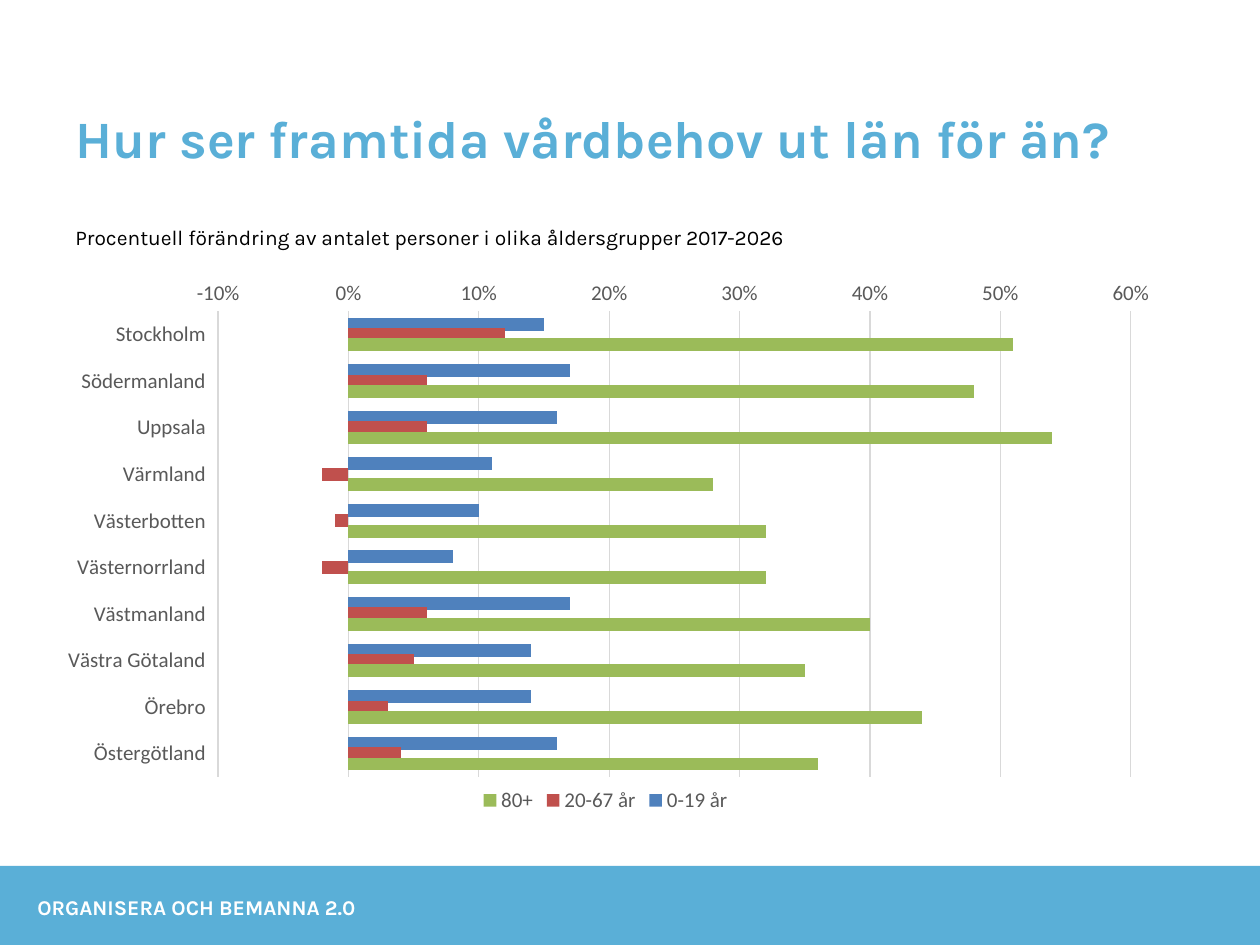
from lxml.etree import SubElement
from pptx import Presentation
from pptx.chart.data import CategoryChartData
from pptx.dml.color import RGBColor
from pptx.enum.chart import XL_CHART_TYPE, XL_LEGEND_POSITION, XL_TICK_LABEL_POSITION, XL_TICK_MARK
from pptx.enum.shapes import MSO_SHAPE
from pptx.enum.text import MSO_ANCHOR, MSO_AUTO_SIZE, PP_ALIGN
from pptx.oxml.ns import qn
from pptx.util import Emu, Pt

EMU_PER_PX = 914400 / 126
BLUE, WHITE, BLACK, GREY, LIGHT_GREY = "5AAFD7", "FFFFFF", "000000", "595959", "D9D9D9"


def box(*lengths):
    return [Emu(round(length * EMU_PER_PX)) for length in lengths]


def style(font, size, name, color, bold=False):
    font.size, font.name, font.bold = Pt(size), name, bold
    font.color.rgb = RGBColor.from_string(color)


presentation = Presentation()
presentation.slide_width, presentation.slide_height = box(1260, 945)
slide = presentation.slides.add_slide(presentation.slide_layouts[5])

# Footer band
band = slide.shapes.add_shape(MSO_SHAPE.RECTANGLE, *box(0, 866, 1260, 79))
band.shadow.inherit = False
band.fill.solid()
band.fill.fore_color.rgb = RGBColor.from_string(BLUE)
band.line.fill.background()

# Title, footer text and chart heading
title = slide.shapes.title
title.left, title.top, title.width, title.height = box(63, 89, 1134, 156)
footer = slide.shapes.add_textbox(*box(25, 882, 718, 50))
heading = slide.shapes.add_textbox(*box(63, 210, 1134, 55))
texts = [
    (title, "Hur ser framtida vårdbehov ut län för än?", 30, BLUE, True),
    (footer, "ORGANISERA OCH BEMANNA 2.0", 12, WHITE, True),
    (heading, "Procentuell förändring av antalet personer i olika åldersgrupper 2017-2026", 12, BLACK, False),
]
for shape, text, size, color, bold in texts:
    text_frame = shape.text_frame
    text_frame.text = text
    text_frame.word_wrap = True
    text_frame.auto_size = MSO_AUTO_SIZE.NONE
    text_frame.vertical_anchor = MSO_ANCHOR.MIDDLE
    paragraph = text_frame.paragraphs[0]
    paragraph.alignment = PP_ALIGN.LEFT
    style(paragraph.runs[0].font, size, "Karla", color, bold)
title.text_frame.vertical_anchor = MSO_ANCHOR.TOP
title.text_frame.margin_top = box(17)[0]

# Population change by county and age group
chart_data = CategoryChartData(number_format="0%")
chart_data.categories = [
    "Stockholm", "Södermanland", "Uppsala", "Värmland", "Västerbotten",
    "Västernorrland", "Västmanland", "Västra Götaland", "Örebro", "Östergötland",
]
age_groups = [
    ("0-19 år", "4F81BD", [0.15, 0.17, 0.16, 0.11, 0.1, 0.08, 0.17, 0.14, 0.14, 0.16]),
    ("20-67 år", "C0504D", [0.12, 0.06, 0.06, -0.02, -0.01, -0.02, 0.06, 0.05, 0.03, 0.04]),
    ("80+", "9BBB59", [0.51, 0.48, 0.54, 0.28, 0.32, 0.32, 0.4, 0.35, 0.44, 0.36]),
]
for name, color, values in age_groups:
    chart_data.add_series(name, values)
chart = slide.shapes.add_chart(
    XL_CHART_TYPE.BAR_CLUSTERED, *box(63, 266, 1086, 552), chart_data
).chart
style(chart.font, 12, "Calibri", BLACK)
chart.has_title = False

plot = chart.plots[0]
plot.gap_width, plot.overlap = 100, 20
plot.vary_by_categories = False
for series, (name, color, values) in zip(plot.series, age_groups):
    series.invert_if_negative = False
    series.format.fill.solid()
    series.format.fill.fore_color.rgb = RGBColor.from_string(color)

# Axes
category_axis, value_axis = chart.category_axis, chart.value_axis
for axis in (category_axis, value_axis):
    axis.major_tick_mark = axis.minor_tick_mark = XL_TICK_MARK.NONE
    style(axis.tick_labels.font, 12, "Calibri", GREY)
category_axis.reverse_order = True
category_axis.tick_label_position = XL_TICK_LABEL_POSITION.LOW
value_axis.minimum_scale, value_axis.maximum_scale, value_axis.major_unit = -0.1, 0.6, 0.1
value_axis.tick_labels.number_format = "0%"
value_axis.tick_labels.number_format_is_linked = False
value_axis.format.line.fill.background()
value_axis.has_major_gridlines = True
for line in (category_axis.format.line, value_axis.major_gridlines.format.line):
    line.color.rgb = RGBColor.from_string(LIGHT_GREY)
    line.width = Pt(0.75)

# Legend
chart.has_legend = True
chart.legend.position = XL_LEGEND_POSITION.BOTTOM
chart.legend.include_in_layout = False
style(chart.legend.font, 12, "Calibri", GREY)

# Fixed inner plot area, as shares of the chart
plot_area = chart.element.find(".//" + qn("c:plotArea"))
layout = plot_area.find(qn("c:layout"))
if layout is None:
    layout = SubElement(plot_area, qn("c:layout"))
    plot_area.insert(0, layout)
manual_layout = SubElement(layout, qn("c:manualLayout"))
settings = [
    ("layoutTarget", "inner"), ("xMode", "edge"), ("yMode", "edge"),
    ("x", 0.143), ("y", 0.082), ("w", 0.841), ("h", 0.844),
]
for tag, value in settings:
    SubElement(manual_layout, qn("c:" + tag)).set("val", str(value))

presentation.save("out.pptx")
